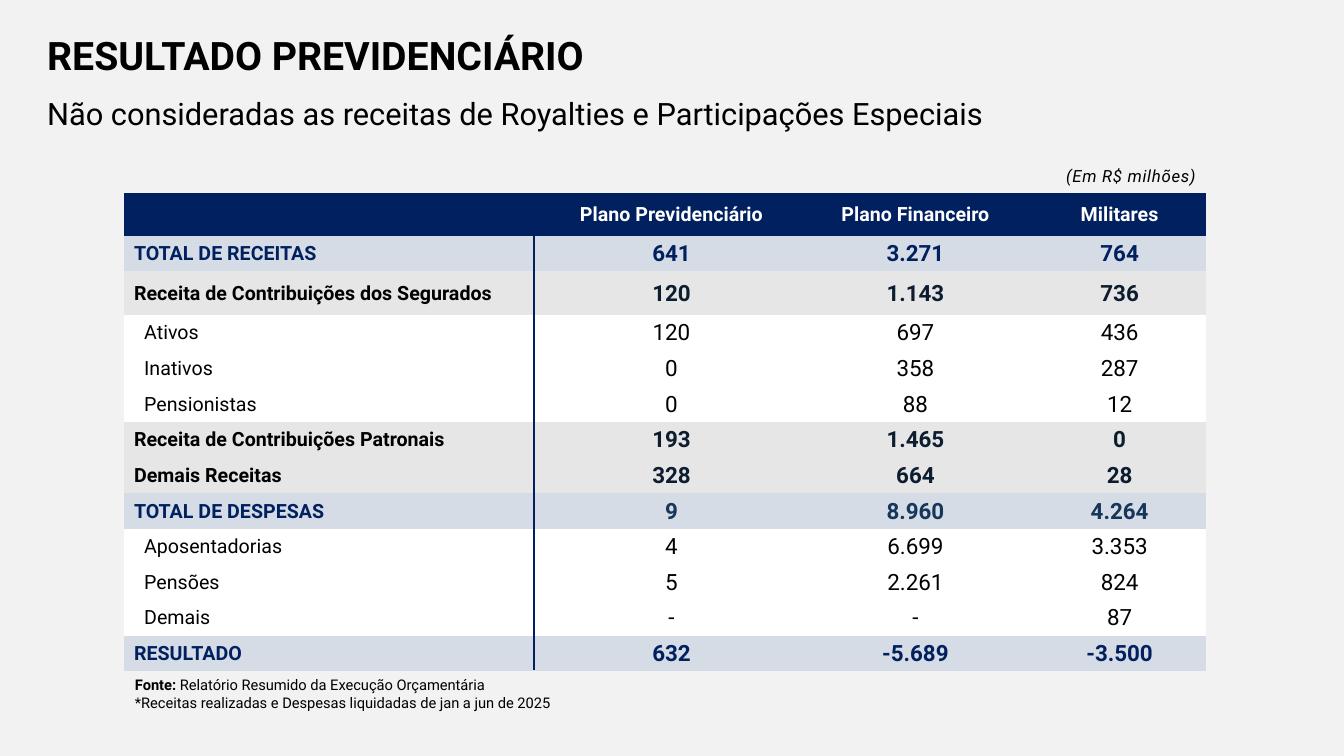
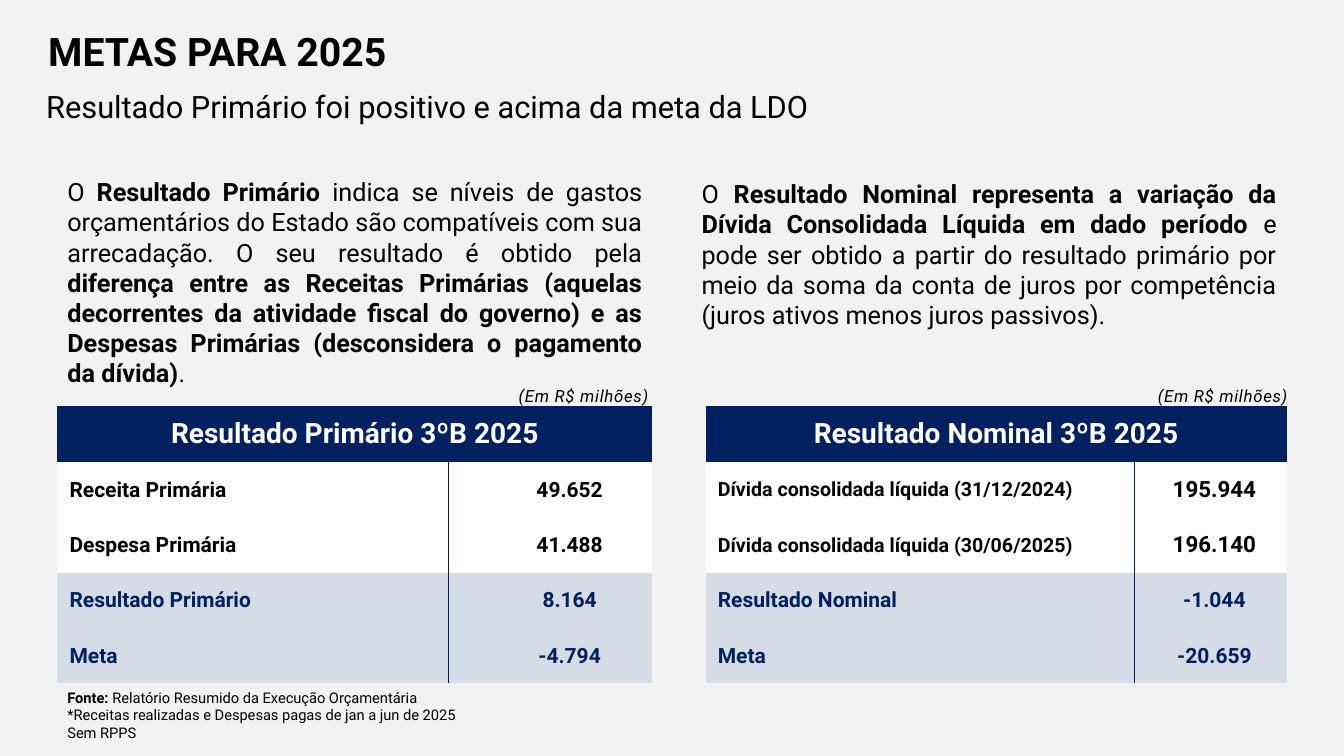
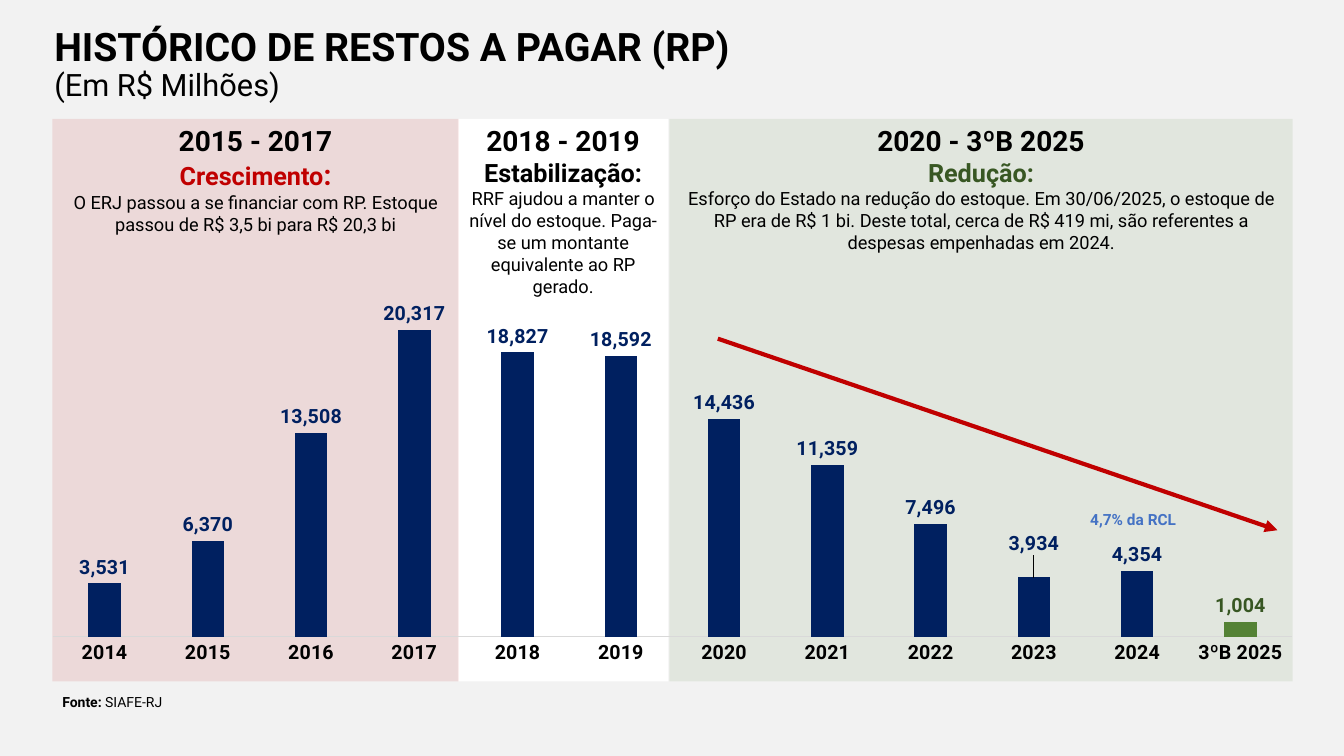
"""Build three slides on pension results, fiscal targets and outstanding payables."""
from pptx import Presentation
from pptx import util as u
from pptx.chart.data import CategoryChartData
from pptx.dml.color import RGBColor
from pptx.enum import chart as charts, shapes, text
from pptx.oxml import parse_xml
from pptx.oxml.ns import nsdecls, qn


class Theme:
    font = "Roboto"
    back, white, black = "F2F2F2", "FFFFFF", "000000"
    navy, pale_blue, pale_gray = "002060", "D6DCE5", "E7E6E6"
    ink, steel, sky = "0B1D2F", "16365C", "4472C4"
    red, green, dark_green, rule = "C00000", "548235", "385723", "D9D9D9"
    title, subtitle, heading, body = 28, 22, 20, 18
    value, fact, label, small, unit, tag, source, tiny = 16, 15, 14, 13, 12, 11, 10.5, 10


ALIGN = text.PP_ALIGN
MIDDLE = text.MSO_ANCHOR.MIDDLE


def write(frame, paragraphs, align=ALIGN.LEFT, spacing=None):
    """Fill a frame with paragraphs of (text, size, colour, bold) spans."""
    frame.word_wrap = True
    for number, spans in enumerate(paragraphs):
        para = frame.paragraphs[0] if number == 0 else frame.add_paragraph()
        para.alignment = align
        para.line_spacing = spacing
        for words, size, color, bold in spans:
            span = para.add_run()
            span.text = words.rstrip("\n")
            formats = {"name": Theme.font, "size": u.Pt(size), "bold": bold}
            for key, value in formats.items():
                setattr(span.font, key, value)
            span.font.color.rgb = RGBColor.from_string(color)
            if words.endswith("\n"):
                para.add_line_break()


def add_text(page, at, paragraphs, align=ALIGN.LEFT, spacing=None, anchor=text.MSO_ANCHOR.TOP):
    """Add a text box at left, top, width, height and return its frame."""
    frame = page.shapes.add_textbox(*map(u.Inches, at)).text_frame
    write(frame, paragraphs, align, spacing)
    frame.vertical_anchor = anchor
    return frame


deck = Presentation()
deck.slide_width, deck.slide_height = u.Inches(13.33), u.Inches(7.5)
pages = []
for _ in range(3):
    page = deck.slides.add_slide(deck.slide_layouts[6])
    page.background.fill.solid()
    page.background.fill.fore_color.rgb = RGBColor.from_string(Theme.back)
    pages.append(page)
pension, targets, history = pages

title_boxes = [
    (pension, (0.37, 0.18, 7.85, 0.79), "RESULTADO PREVIDENCIÁRIO", Theme.title, True, 0.9),
    (pension, (0.37, 0.79, 12.6, 0.59),
     "Não consideradas as receitas de Royalties e Participações Especiais", Theme.subtitle, False, 1.2),
    (targets, (0.38, 0.14, 7.85, 0.79), "METAS PARA 2025", Theme.title, True, 0.9),
    (targets, (0.36, 0.72, 12.6, 0.59),
     "Resultado Primário foi positivo e acima da meta da LDO", Theme.subtitle, False, 1.2),
]
for page, at, words, size, bold, spacing in title_boxes:
    add_text(page, at, [[(words, size, Theme.black, bold)]], spacing=spacing, anchor=MIDDLE)
add_text(history, (0.44, 0.16, 9.55, 0.97), [
    [("HISTÓRICO DE RESTOS A PAGAR (RP)", Theme.title, Theme.black, True)],
    [("(Em R$ Milhões)", Theme.subtitle, Theme.black, False)],
], spacing=0.9, anchor=MIDDLE)

for page, left, top in [(pension, 9.87, 1.56), (targets, 10.78, 3.74), (targets, 4.44, 3.74)]:
    frame = add_text(page, (left, top, 2.09, 0.42),
                     [[("(Em R$ milhões)", Theme.unit, Theme.black, False)]], ALIGN.RIGHT, 1.2)
    span = frame.paragraphs[0].runs[0]
    span.font.italic = True
    span._r.get_or_add_rPr().set("spc", "50")

report = "Relatório Resumido da Execução Orçamentária"
source_notes = [
    (pension, (1.24, 6.66, 8.02, 0.45), Theme.source,
     [report, "*Receitas realizadas e Despesas liquidadas de jan a jun de 2025"]),
    (targets, (0.57, 6.78, 4.74, 0.63), Theme.source,
     [report, "*Receitas realizadas e Despesas pagas de jan a jun de 2025", "Sem RPPS"]),
    (history, (0.52, 6.83, 5.36, 0.27), Theme.tiny, ["SIAFE-RJ"]),
]
for page, at, size, lines in source_notes:
    paragraphs = [[(line, size, Theme.black, False)] for line in lines]
    paragraphs[0].insert(0, ("Fonte: ", size, Theme.black, True))
    add_text(page, at, paragraphs)

explanations = [
    ((0.57, 1.7, 5.9, 2.22), [
        ("O ", False), ("Resultado Primário ", True),
        ("indica se níveis de gastos orçamentários do Estado são compatíveis com sua arrecadação. "
         "O seu resultado é obtido pela ", False),
        ("diferença entre as Receitas Primárias (aquelas decorrentes da atividade fiscal do governo) "
         "e as Despesas Primárias (desconsidera o pagamento da dívida)", True),
        (".", False)]),
    ((6.86, 1.72, 5.9, 1.62), [
        ("O ", False),
        ("Resultado Nominal representa a variação da Dívida Consolidada Líquida em dado período ", True),
        ("e pode ser obtido a partir do resultado primário por meio da soma da conta de juros por "
         "competência (juros ativos menos juros passivos).", False)]),
]
for at, spans in explanations:
    add_text(targets, at, [[(words, Theme.body, Theme.black, bold) for words, bold in spans]],
             ALIGN.JUSTIFY)

row_styles = {
    "header": (Theme.navy, Theme.white, Theme.white, True),
    "total": (Theme.pale_blue, Theme.navy, Theme.navy, True),
    "spending": (Theme.pale_blue, Theme.navy, Theme.steel, True),
    "group": (Theme.pale_gray, Theme.black, Theme.ink, True),
    "fact": (Theme.white, Theme.black, Theme.black, True),
    "item": (Theme.white, Theme.black, Theme.black, False),
}
plan_sizes, even_sizes = (Theme.label, Theme.value), (Theme.fact, Theme.fact)
plan_rows = [("header", (Theme.label, Theme.label),
              ["", "Plano Previdenciário", "Plano Financeiro", "Militares"])]
plan_rows += [(style, plan_sizes, cells) for style, *cells in [
    ("total", "TOTAL DE RECEITAS", "641", "3.271", "764"),
    ("group", "Receita de Contribuições dos Segurados", "120", "1.143", "736"),
    ("item", "Ativos", "120", "697", "436"),
    ("item", "Inativos", "0", "358", "287"),
    ("item", "Pensionistas", "0", "88", "12"),
    ("group", "Receita de Contribuições Patronais", "193", "1.465", "0"),
    ("group", "Demais Receitas", "328", "664", "28"),
    ("spending", "TOTAL DE DESPESAS", "9", "8.960", "4.264"),
    ("item", "Aposentadorias", "4", "6.699", "3.353"),
    ("item", "Pensões", "5", "2.261", "824"),
    ("item", "Demais", "-", "-", "87"),
    ("total", "RESULTADO", "632", "-5.689", "-3.500"),
]]
heading_sizes = (Theme.heading, Theme.heading)
primary_rows = [
    ("header", heading_sizes, ["Resultado Primário 3ºB 2025"]),
    ("fact", even_sizes, ["Receita Primária", "49.652"]),
    ("fact", even_sizes, ["Despesa Primária", "41.488"]),
    ("total", even_sizes, ["Resultado Primário", "8.164"]),
    ("total", even_sizes, ["Meta", "-4.794"]),
]
nominal_rows = [
    ("header", heading_sizes, ["Resultado Nominal 3ºB 2025"]),
    ("fact", plan_sizes, ["Dívida consolidada líquida (31/12/2024)", "195.944"]),
    ("fact", plan_sizes, ["Dívida consolidada líquida (30/06/2025)", "196.140"]),
    ("total", even_sizes, ["Resultado Nominal", "-1.044"]),
    ("total", even_sizes, ["Meta", "-20.659"]),
]
tall = 0.43
short = (4.75 - 2 * tall) / 11
plan_heights = [tall, short, tall] + [short] * 10
tables = [
    (pension, 1.23, 1.91, [4.18, 2.5, 2.34, 1.71], plan_heights, 0.1, plan_rows),
    (targets, 0.57, 4.03, [4.26, 1.64], [0.55] * 5, 0.12, primary_rows),
    (targets, 7, 4.03, [4.33, 1.43], [0.55] * 5, 0.12, nominal_rows),
]
for page, left, top, widths, heights, indent, rows in tables:
    table = page.shapes.add_table(len(rows), len(widths), *map(
        u.Inches, (left, top, sum(widths), sum(heights)))).table
    table.first_row = table.horz_banding = False
    table._tbl.tblPr.find(qn("a:tableStyleId")).text = "{2D5ABB26-0587-4C30-8999-92F81FD0307C}"
    for column, width in zip(table.columns, widths):
        column.width = u.Inches(width)
    for r, (style, sizes, cells) in enumerate(rows):
        table.rows[r].height = u.Inches(heights[r])
        fill, label_color, value_color, bold = row_styles[style]
        if len(cells) == 1:
            table.cell(r, 0).merge(table.cell(r, len(widths) - 1))
        for c, words in enumerate(cells):
            cell = table.cell(r, c)
            is_label = c == 0 and style != "header"
            margin = indent + (0.1 if style == "item" else 0) if is_label else 0.01
            formats = {"vertical_anchor": MIDDLE, "margin_left": u.Inches(margin),
                       "margin_right": u.Inches(0.01), "margin_top": u.Inches(0.01), "margin_bottom": 0}
            for key, value in formats.items():
                setattr(cell, key, value)
            cell.fill.solid()
            cell.fill.fore_color.rgb = RGBColor.from_string(fill)
            if words:
                color = label_color if is_label else value_color
                write(cell.text_frame, [[(words, sizes[0 if is_label else 1], color, bold)]],
                      ALIGN.LEFT if is_label else ALIGN.CENTER)

periods = [
    (6.64, 6.18, Theme.green, 10, "2020 - 3ºB 2025",
     [("Redução:\n", Theme.body, Theme.dark_green, True)],
     "Esforço do Estado na redução do estoque. Em 30/06/2025, o estoque de RP era de R$ 1 bi. "
     "Deste total, cerca de R$ 419 mi, são referentes a despesas empenhadas em 2024."),
    (4.54, 2.09, Theme.white, 100, "2018 - 2019",
     [("Estabilização:\n", Theme.body, Theme.black, True)],
     "RRF ajudou a manter o nível do estoque. Paga-se um montante equivalente ao RP gerado."),
    (0.52, 4.03, Theme.red, 10, "2015 - 2017",
     [("Crescimento", Theme.body, Theme.red, True), (":\n", Theme.heading, Theme.red, True)],
     "O ERJ passou a se financiar com RP. Estoque passou de R$ 3,5 bi para R$ 20,3 bi"),
]
for left, width, color, opacity, years, trend, story in periods:
    panel = history.shapes.add_shape(shapes.MSO_SHAPE.RECTANGLE,
                                     *map(u.Inches, (left, 1.18, width, 5.58)))
    panel.shadow.inherit = False
    panel.line.fill.background()
    panel.fill.solid()
    panel.fill.fore_color.rgb = RGBColor.from_string(color)
    if opacity < 100:
        tint = panel._element.spPr.find(".//" + qn("a:srgbClr"))
        tint.append(parse_xml(f'<a:alpha {nsdecls("a")} val="{opacity * 1000}"/>'))
    panel.text_frame.vertical_anchor = text.MSO_ANCHOR.TOP
    write(panel.text_frame, [[(years, Theme.heading, Theme.black, True)],
                             trend + [(story, Theme.small, Theme.black, False)]], ALIGN.CENTER)

rules = [
    (pension, (5.3, 2.34, 5.3, 6.65), Theme.navy, 1.5, False),
    (targets, (4.45, 4.58, 4.45, 6.78), Theme.navy, 0.5, False),
    (targets, (11.25, 4.58, 11.25, 6.78), Theme.navy, 0.5, False),
    (history, (7.12, 3.36, 12.67, 5.26), Theme.red, 3, True),
]
for page, ends, color, width, arrow in rules:
    line = page.shapes.add_connector(shapes.MSO_CONNECTOR.STRAIGHT, *map(u.Inches, ends))
    line.line.color.rgb = RGBColor.from_string(color)
    line.line.width = u.Pt(width)
    line._element.spPr.append(parse_xml(f'<a:effectLst {nsdecls("a")}/>'))
    if arrow:
        line.line._get_or_add_ln().append(parse_xml(f'<a:tailEnd {nsdecls("a")} type="triangle"/>'))

add_text(history, (10.66, 5.01, 1.16, 0.29),
         [[("4,7% da RCL", Theme.tag, Theme.sky, True)]], ALIGN.CENTER)

stock = CategoryChartData(number_format="#,##0")
stock.categories = [str(year) for year in range(2014, 2025)] + ["3ºB 2025"]
stock.add_series("Series 1", [3531, 6370, 13508, 20317, 18827, 18592,
                              14436, 11359, 7496, 3934, 4354, 1004])
chart = history.shapes.add_chart(charts.XL_CHART_TYPE.COLUMN_CLUSTERED,
                                 *map(u.Inches, (0.52, 2.35, 12.3, 4.41)), stock).chart
chart.has_title = chart.has_legend = False
plot = chart.plots[0]
plot.gap_width = 219
plot.vary_by_categories = False
series = plot.series[0]
labels = series.data_labels
for key, value in {"show_value": True, "number_format": "#,##0", "number_format_is_linked": False,
                   "position": charts.XL_LABEL_POSITION.OUTSIDE_END}.items():
    setattr(labels, key, value)
for key, value in {"visible": False, "has_major_gridlines": False,
                   "minimum_scale": 0, "maximum_scale": 25000}.items():
    setattr(chart.value_axis, key, value)
years_axis = chart.category_axis
years_axis.major_tick_mark = charts.XL_TICK_MARK.NONE
years_axis.format.line.color.rgb = RGBColor.from_string(Theme.rule)
years_axis.format.line.width = u.Pt(0.75)

latest = series.points[11]
for bar, color in [(series, Theme.navy), (latest, Theme.green)]:
    bar.format.fill.solid()
    bar.format.fill.fore_color.rgb = RGBColor.from_string(color)
raised = series.points[9].data_label
chart_fonts = [(chart.font, Theme.black), (years_axis.tick_labels.font, Theme.black),
               (labels.font, Theme.navy), (raised.font, Theme.navy),
               (latest.data_label.font, Theme.dark_green)]
for font, color in chart_fonts:
    for key, value in {"name": Theme.font, "size": u.Pt(Theme.label), "bold": True}.items():
        setattr(font, key, value)
    font.color.rgb = RGBColor.from_string(color)
for label, lift in [(raised, -0.04), (latest.data_label, 0)]:
    label.position = charts.XL_LABEL_POSITION.OUTSIDE_END
    element = label._get_or_add_dLbl()
    element.insert(1, parse_xml(f'<c:numFmt {nsdecls("c")} formatCode="#,##0" sourceLinked="0"/>'))
    if lift:
        element.insert(1, parse_xml(
            f'<c:layout {nsdecls("c")}><c:manualLayout><c:x val="0"/><c:y val="{lift}"/>'
            '</c:manualLayout></c:layout>'))

series_labels = labels._element
for leader in series_labels.findall(qn("c:showLeaderLines")):
    series_labels.remove(leader)
series_labels.append(parse_xml(
    f'<c:extLst {nsdecls("c")}><c:ext uri="{{CE6537A1-D6FC-4f65-9D91-7224C49458BB}}" '
    'xmlns:c15="http://schemas.microsoft.com/office/drawing/2012/chart">'
    '<c15:showLeaderLines val="0"/></c:ext></c:extLst>'))

plot_area = chart._chartSpace.find(".//" + qn("c:plotArea"))
for old_layout in plot_area.findall(qn("c:layout")):
    plot_area.remove(old_layout)
plot_area.insert(0, parse_xml(
    f'<c:layout {nsdecls("c")}><c:manualLayout><c:layoutTarget val="inner"/>'
    '<c:xMode val="edge"/><c:yMode val="edge"/><c:x val="0"/><c:y val="0.05"/>'
    '<c:w val="1"/><c:h val="0.85"/></c:manualLayout></c:layout>'))
clear = f'<c:spPr {nsdecls("c", "a")}><a:noFill/><a:ln><a:noFill/></a:ln></c:spPr>'
plot_area.append(parse_xml(clear))
chart._chartSpace.find(qn("c:chart")).addnext(parse_xml(clear))

deck.save("out.pptx")
